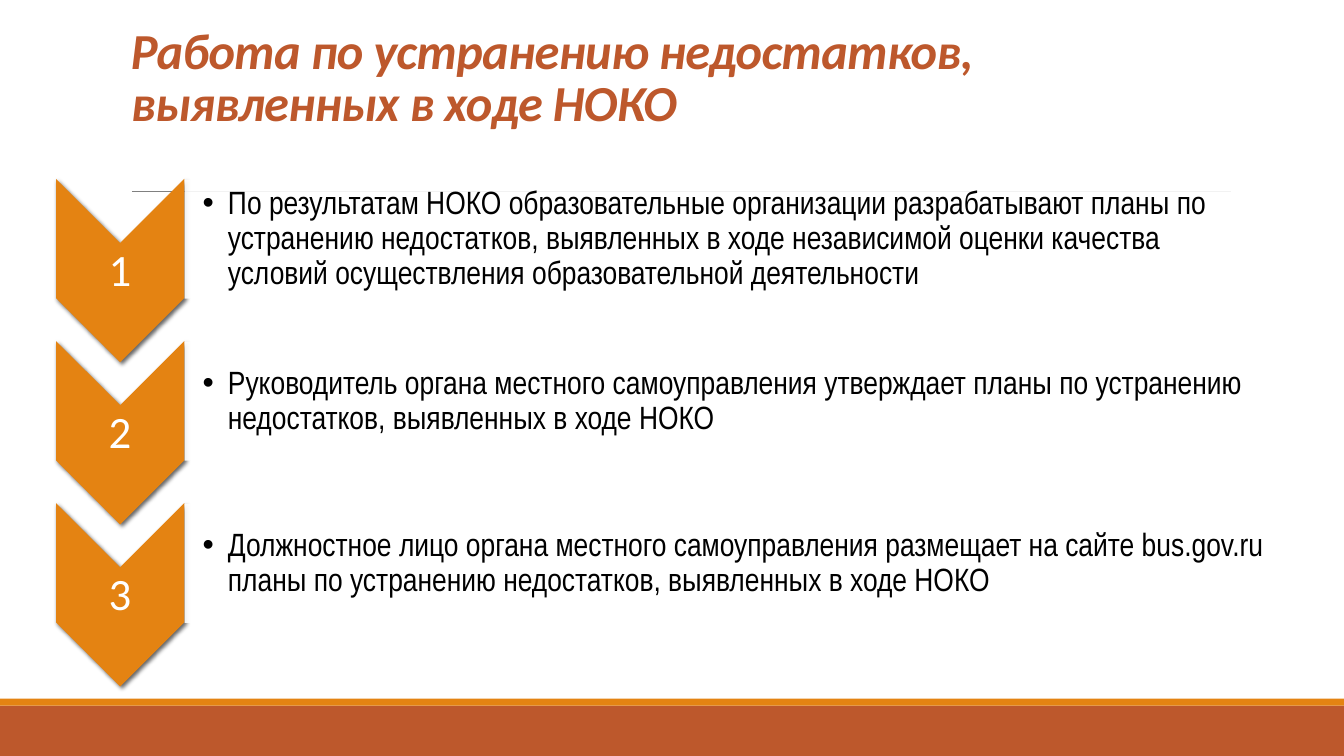
import pptx
import pptx.util
import pptx.dml.color
import pptx.enum.shapes
import pptx.enum.text
import pptx.oxml
import pptx.oxml.ns
from lxml import etree

Pt = pptx.util.Pt
SHAPE = pptx.enum.shapes.MSO_SHAPE
ALIGN = pptx.enum.text.PP_ALIGN
ANCHOR = pptx.enum.text.MSO_ANCHOR
qn = pptx.oxml.ns.qn

# Content
TITLE = "Работа по устранению недостатков, выявленных в ходе НОКО"
STEPS = [
    "По результатам НОКО образовательные организации разрабатывают планы по "
    "устранению недостатков, выявленных в ходе независимой оценки качества "
    "условий осуществления образовательной деятельности",
    "Руководитель органа местного самоуправления утверждает планы по "
    "устранению недостатков, выявленных в ходе НОКО",
    "Должностное лицо органа местного самоуправления размещает на сайте "
    "bus.gov.ru планы по устранению недостатков, выявленных в ходе НОКО",
]
COLORS = {"rust": "BD582C", "orange": "E48312", "rule": "808080",
          "panel": "FFFFFF", "number": "FFFFFF", "text": "000000"}

# Layout, in points
WIDTH, HEIGHT = 960, 540
FOOTER_TOP, STRIPE_HEIGHT = 504, 5
STEP_PITCH = 115.8
CHEVRON_CENTER = (85.8, 193.3)
CHEVRON_SIZE = (131, 91.6)
NUMBER_SIZE = (91.6, 39.4)
PANEL_LEFT, PANEL_CENTER_Y = 131.8, 170.8
PANEL_SIZE = (85, 777.6)
TEXT_SIZE = (773.5, 76.8)

SHADOW = (
    '<a:effectLst xmlns:a="http://schemas.openxmlformats.org/drawingml/2006/main">'
    '<a:outerShdw blurRad="38100" dist="25400" dir="2700000" rotWithShape="0">'
    '<a:srgbClr val="000000"><a:alpha val="60000"/></a:srgbClr>'
    '</a:outerShdw></a:effectLst>')


def rgb(name):
    return pptx.dml.color.RGBColor.from_string(COLORS[name])


def add_block(kind, left, top, width, height, color):
    block = slide.shapes.add_shape(kind, Pt(left), Pt(top), Pt(width), Pt(height))
    block.shadow.inherit = False
    block.fill.solid()
    block.fill.fore_color.rgb = rgb(color)
    block.line.fill.background()
    return block


def add_turned(kind, center_x, center_y, size, color):
    width, height = size
    block = add_block(kind, center_x - width / 2, center_y - height / 2,
                      width, height, color)
    block.rotation = 90
    return block


def add_text(text, left, top, width, height, insets, anchor, spacing, font, size, color):
    box = slide.shapes.add_textbox(Pt(left), Pt(top), Pt(width), Pt(height))
    frame = box.text_frame
    frame.word_wrap = True
    frame.vertical_anchor = anchor
    frame.margin_left, frame.margin_top, frame.margin_right, frame.margin_bottom = map(Pt, insets)
    paragraph = frame.paragraphs[0]
    paragraph.text = text
    paragraph.line_spacing = spacing
    paragraph.font.name = font
    paragraph.font.size = Pt(size)
    paragraph.font.color.rgb = rgb(color)
    return paragraph


def add_bullet(paragraph):
    properties = paragraph._p.get_or_add_pPr()
    properties.set("marL", str(Pt(18)))
    properties.set("indent", str(Pt(-18)))
    bullet_font = etree.Element(qn("a:buFont"), typeface="Arial")
    bullet = etree.Element(qn("a:buChar"), char="•")
    defaults = properties.find(qn("a:defRPr"))
    defaults.addprevious(bullet_font)
    defaults.addprevious(bullet)


deck = pptx.Presentation()
deck.slide_width, deck.slide_height = Pt(WIDTH), Pt(HEIGHT)
slide = deck.slides.add_slide(deck.slide_layouts[6])

# Footer bands
add_block(SHAPE.RECTANGLE, 0, FOOTER_TOP, WIDTH, HEIGHT - FOOTER_TOP, "rust")
add_block(SHAPE.RECTANGLE, 0, FOOTER_TOP - STRIPE_HEIGHT, WIDTH, STRIPE_HEIGHT, "orange")

# Rule under the title
rule = slide.shapes.add_connector(pptx.enum.shapes.MSO_CONNECTOR.STRAIGHT,
                                  Pt(94.3), Pt(136.8), Pt(879), Pt(136.8))
rule.line.color.rgb = rgb("rule")
rule.line.width = Pt(0.5)
etree.SubElement(rule._element.spPr, qn("a:effectLst"))

# Title
title = add_text(TITLE, 86.4, 20.5, 792, 80, (7.2, 0, 7.2, 0), ANCHOR.TOP,
                 0.85, "Calibri", 36, "rust")
title.font.bold = title.font.italic = True
title.runs[0].font._element.set("spc", "-50")

# Numbered steps
for index, step in enumerate(STEPS):
    shift = index * STEP_PITCH
    center_x, center_y = CHEVRON_CENTER[0], CHEVRON_CENTER[1] + shift
    chevron = add_turned(SHAPE.CHEVRON, center_x, center_y, CHEVRON_SIZE, "orange")
    properties = chevron._element.spPr
    properties.replace(properties.find(qn("a:effectLst")), pptx.oxml.parse_xml(SHADOW))

    number = add_text(str(index + 1), center_x - NUMBER_SIZE[0] / 2,
                      center_y + 0.7 - NUMBER_SIZE[1] / 2, *NUMBER_SIZE,
                      (1.5, 1.5, 1.5, 1.5), ANCHOR.MIDDLE, 0.9, "Calibri", 32, "number")
    number.alignment = ALIGN.CENTER

    panel_y = PANEL_CENTER_Y + shift
    panel = add_turned(SHAPE.ROUND_2_SAME_RECTANGLE, PANEL_LEFT + PANEL_SIZE[1] / 2,
                       panel_y, PANEL_SIZE, "panel")
    panel_color = panel._element.spPr.find(qn("a:solidFill"))[0]
    etree.SubElement(panel_color, qn("a:alpha"), val="90000")

    add_bullet(add_text(step, PANEL_LEFT, panel_y - TEXT_SIZE[1] / 2, *TEXT_SIZE,
                        (13, 1.5, 1.5, 1.5), ANCHOR.MIDDLE, 0.9,
                        "Arial Narrow", 23, "text"))

deck.save("out.pptx")
